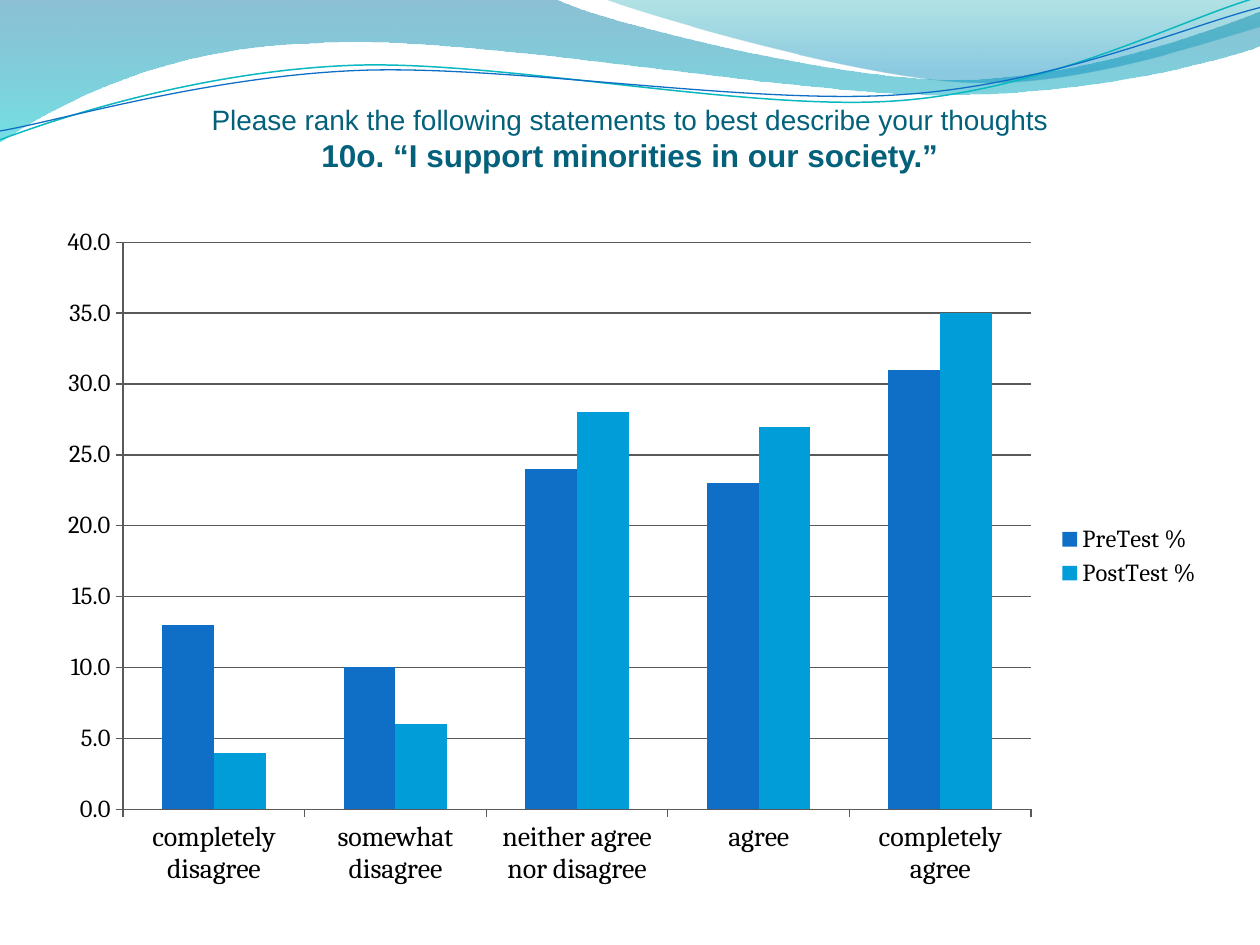
from lxml.etree import SubElement
from pptx import Presentation
from pptx.chart.data import CategoryChartData
from pptx.dml.color import RGBColor
from pptx.enum.chart import XL_CHART_TYPE, XL_LEGEND_POSITION, XL_TICK_MARK
from pptx.enum.text import MSO_ANCHOR, PP_ALIGN
from pptx.oxml.ns import qn
from pptx.util import Inches, Pt

TITLE = [
    ("Please rank the following statements to best describe your thoughts", {"size": Pt(16), "bold": False}),
    ("10o. “I support minorities in our society.”", {"size": Pt(18), "bold": True}),
]
CATEGORIES = ["completely disagree", "somewhat disagree", "neither agree nor disagree", "agree", "completely agree"]
SERIES = [
    ("PreTest %", [13, 10, 24, 23, 31], "0F6FC6"),
    ("PostTest %", [4, 6, 28, 27, 35], "009DD9"),
]
AXIS_COLOR = "595959"

# Each path is a start point followed by line ends (2 numbers) and cubic curves (6 numbers).
WAVE_BANDS = [
    ([(0, 0), (4.4, -0.01), (4.76, 0.17, 6.64, 0.63, 7.58, 0.63), (8.53, 0.63, 9.58, 0.26, 10, 0.09),
      (10.01, 0.36), (9.83, 0.44, 8.7, 0.76, 7.46, 0.75), (6.22, 0.75, 3.82, 0.28, 2.57, 0.34),
      (1.29, 0.36, 0.46, 0.83, -0.01, 1.13), (0, 0)],
     [(0, "0074A1", 45), (1, "00C6CF", 55)]),
    ([(4.79, -0.01), (5.09, 0.11, 6.82, 0.62, 7.69, 0.65), (8.56, 0.69, 9.61, 0.32, 10, 0.21),
      (10, 0), (4.79, -0.01)],
     [(0, "00A1A9", 30), (0.8, "008BBF", 45)]),
]
WAVE_LINES = [
    ([(0, 1.11), (0.48, 0.93, 1.58, 0.57, 2.77, 0.52), (3.95, 0.47, 5.93, 0.89, 7.13, 0.8),
      (8.33, 0.71, 9.38, 0.15, 9.98, -0.02)], "0AB8BF", 0.85),
    ([(0, 1.04), (0.47, 0.96, 1.64, 0.61, 2.83, 0.56), (4.03, 0.51, 5.97, 0.84, 7.17, 0.75),
      (8.36, 0.67, 9.41, 0.21, 10, 0.06)], "0F6FC6", 0.75),
]


def color(value):
    return RGBColor.from_string(value)


def assign(target, values):
    for name, value in values.items():
        setattr(target, name, value)


def add_wave(slide, path, close):
    points = [(Inches(segment[i]), Inches(segment[i + 1]))
              for segment in path for i in range(0, len(segment), 2)]
    builder = slide.shapes.build_freeform(*points[0])
    builder.add_line_segments(points[1:], close=close)
    shape = builder.convert_to_shape()
    shape.shadow.inherit = False
    lines = iter(list(shape._element.spPr.iter(qn("a:lnTo"))))
    for segment in path[1:]:
        line = next(lines)
        if len(segment) == 6:
            line.addprevious(curve := line.makeelement(qn("a:cubicBezTo")))
            for part in (line, next(lines), next(lines)):
                curve.append(part[0])
                part.getparent().remove(part)
    return shape


def add_wave_band(slide, path, stops):
    shape = add_wave(slide, path, True)
    shape.line.fill.background()
    shape.fill.gradient()
    shape.fill.gradient_angle = 270
    elements = shape._element.spPr.iter(qn("a:gs"))
    for stop, element, (position, value, opacity) in zip(shape.fill.gradient_stops, elements, stops):
        stop.position = position
        stop.color.rgb = color(value)
        SubElement(element[0], qn("a:alpha"), val=str(opacity * 1000))


def add_wave_line(slide, path, value, width):
    shape = add_wave(slide, path, False)
    shape.fill.background()
    shape.line.color.rgb = color(value)
    shape.line.width = Pt(width)


def add_title(slide):
    box = slide.shapes.add_textbox(Inches(0.5), Inches(0.6), Inches(9), Inches(0.78))
    assign(box.text_frame, {"word_wrap": True, "vertical_anchor": MSO_ANCHOR.BOTTOM, "margin_left": 0,
                            "margin_right": 0, "margin_top": Inches(0.05), "margin_bottom": 0})
    paragraph = box.text_frame.paragraphs[0]
    paragraph.alignment = PP_ALIGN.CENTER
    for index, (text, font) in enumerate(TITLE):
        if index:
            paragraph.add_line_break()
        run = paragraph.add_run()
        run.text = text
        assign(run.font, {"name": "Arial", **font})
        run.font.color.rgb = color("04617B")


def add_ranking_chart(slide):
    data = CategoryChartData(number_format="0.0")
    data.categories = CATEGORIES
    for name, values, _ in SERIES:
        data.add_series(name, values)
    chart = slide.shapes.add_chart(XL_CHART_TYPE.COLUMN_CLUSTERED, Inches(0.35), Inches(1.7),
                                   Inches(9.29), Inches(5.43), data).chart
    assign(chart, {"has_title": False, "has_legend": True})
    assign(chart.font, {"name": "Cambria", "size": Pt(10)})
    chart.font.color.rgb = color("000000")
    assign(chart.legend, {"position": XL_LEGEND_POSITION.RIGHT, "include_in_layout": False})
    chart.legend.font.size = Pt(14)

    plot = chart.plots[0]
    assign(plot, {"gap_width": 150, "overlap": 0, "vary_by_categories": False})
    for series, (_, _, value) in zip(plot.series, SERIES):
        series.format.fill.solid()
        series.format.fill.fore_color.rgb = color(value)

    assign(chart.value_axis, {"minimum_scale": 0, "maximum_scale": 40, "major_unit": 5,
                              "has_major_gridlines": True})
    assign(chart.value_axis.tick_labels, {"number_format": "0.0", "number_format_is_linked": False})
    for axis, size in ((chart.category_axis, 16), (chart.value_axis, 14)):
        axis.major_tick_mark = XL_TICK_MARK.OUTSIDE
        axis.tick_labels.font.size = Pt(size)
    for part in (chart.category_axis, chart.value_axis, chart.value_axis.major_gridlines):
        part.format.line.color.rgb = color(AXIS_COLOR)
        part.format.line.width = Pt(0.75)


def main():
    presentation = Presentation()
    assign(presentation, {"slide_width": Inches(10), "slide_height": Inches(7.5)})
    slide = presentation.slides.add_slide(presentation.slide_layouts[6])
    for band in WAVE_BANDS:
        add_wave_band(slide, *band)
    for line in WAVE_LINES:
        add_wave_line(slide, *line)
    add_title(slide)
    add_ranking_chart(slide)
    presentation.save("out.pptx")


if __name__ == "__main__":
    main()
